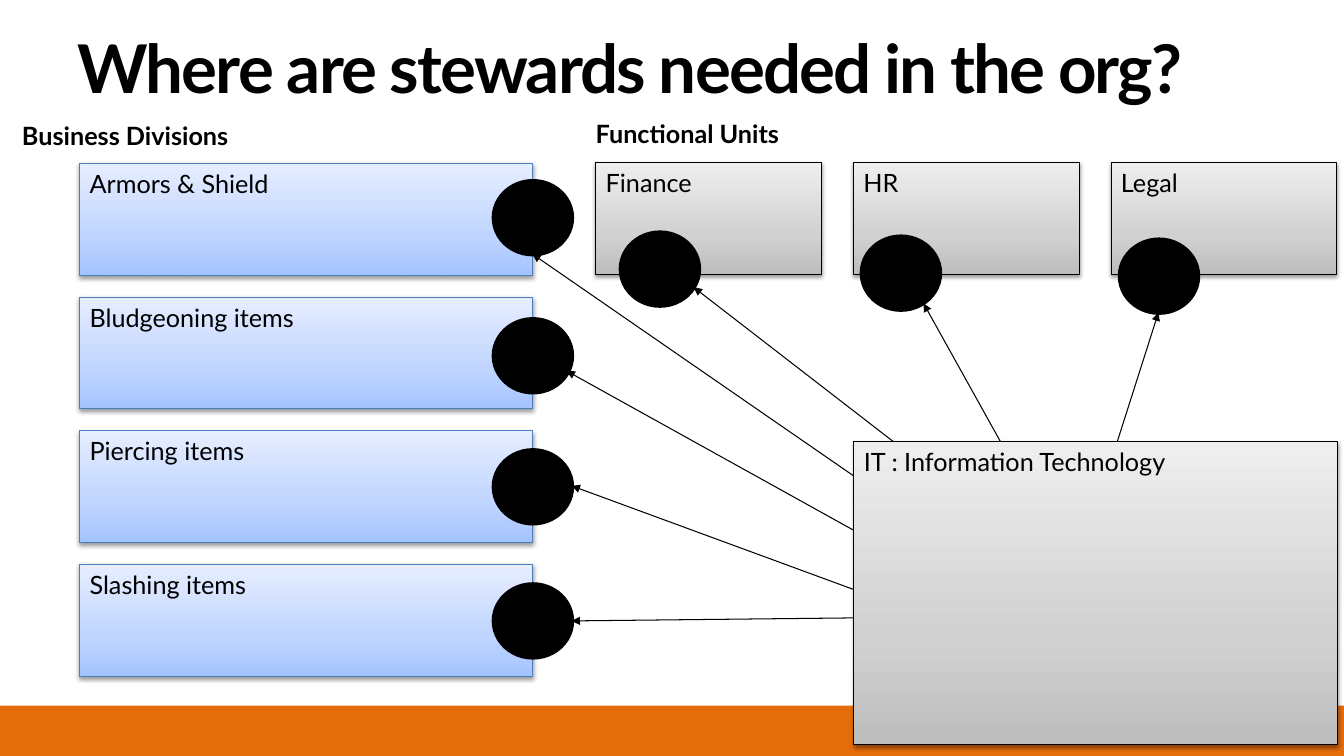
from lxml.etree import SubElement
from pptx import Presentation
from pptx.dml.color import RGBColor
from pptx.enum.shapes import MSO_CONNECTOR, MSO_SHAPE
from pptx.enum.text import MSO_ANCHOR, MSO_AUTO_SIZE, PP_ALIGN
from pptx.oxml import parse_xml
from pptx.oxml.ns import nsdecls, qn
from pptx.util import Inches, Pt

# Content
TITLE = "Where are stewards needed in the org?"
HEADINGS = [("Business Divisions", 0.12, 1.14, 2.34),
            ("Functional Units", 5.81, 1.12, 2.13)]
DIVISIONS = ["Armors & Shield", "Bludgeoning items", "Piercing items", "Slashing items"]
UNITS = ["Finance", "HR", "Legal"]
IT = "IT : Information Technology"

# Steward circles: left, top
DIVISION_STEWARDS = [(4.89, top) for top in (1.79, 3.16, 4.46, 5.79)]
UNIT_STEWARDS = [(6.15, 2.3), (8.54, 2.34), (11.1, 2.37)]

# Arrows from IT to each steward: start, end
DIVISION_ARROWS = [((9.16, 5.2), (5.28, 2.52)), ((8.88, 5.49), (5.62, 3.68)),
                   ((8.58, 5.89), (5.67, 4.82)), ((8.47, 6.13), (5.67, 6.16))]
UNIT_ARROWS = [((9.92, 5.2), (6.88, 2.85)), ((10.25, 4.97), (9.16, 3.01)),
               ((10.76, 5.39), (11.49, 3.1))]

# Layout and style
W, H = 13.33, 7.5
BOX_H = 1.11
DIVISION_X, DIVISION_Y, DIVISION_W, DIVISION_STEP = 0.79, 1.62, 4.49, 1.327
UNIT_X, UNIT_Y, UNIT_W, UNIT_STEP = 5.91, 1.61, 2.24, 2.555
BLACK, ORANGE = "000000", "E46C0A"
BLUE = (("A4C4FF", "BFD4FF", "E6EEFF"), "4B7EBC")
GREY = (("BDBDBD", "D1D1D1", "EEEEEE"), BLACK)
STOPS = (0, 35, 100)

prs = Presentation()
prs.slide_width, prs.slide_height = Inches(W), Inches(H)
s = prs.slides.add_slide(prs.slide_layouts[6])


def rgb(value):
    return RGBColor.from_string(value)


def write(sp, text, size=18, bold=False):
    tf = sp.text_frame
    tf.text = text
    p = tf.paragraphs[0]
    p.alignment = PP_ALIGN.LEFT
    r = p.runs[0]
    r.font.name, r.font.size, r.font.bold = "Lato", Pt(size), bold
    r.font.color.rgb = rgb(BLACK)
    return r


def add_shape(kind, x, y, w, h, fill, line=None, weight=0.75):
    sp = s.shapes.add_shape(kind, Inches(x), Inches(y), Inches(w), Inches(h))
    sp.shadow.inherit = False
    sp.fill.solid()
    sp.fill.fore_color.rgb = rgb(fill)
    if line:
        sp.line.color.rgb = rgb(line)
        sp.line.width = Pt(weight)
    else:
        sp.line.fill.background()
    return sp


def add_box(text, x, y, w, h, style):
    colors, line = style
    sp = add_shape(MSO_SHAPE.RECTANGLE, x, y, w, h, colors[0], line)
    spPr = sp.fill._xPr
    # Vertical gradient, darkest at the bottom
    stops = "".join(f'<a:gs pos="{pos * 1000}"><a:srgbClr val="{color}"/></a:gs>'
                    for pos, color in zip(STOPS, colors))
    spPr.replace(spPr.find(qn("a:solidFill")), parse_xml(
        f'<a:gradFill {nsdecls("a")} rotWithShape="1"><a:gsLst>{stops}</a:gsLst>'
        '<a:lin ang="16200000" scaled="0"/></a:gradFill>'))
    # Soft shadow below
    shadow = SubElement(spPr.find(qn("a:effectLst")), qn("a:outerShdw"),
                        blurRad=str(Pt(3.1)), dist=str(Pt(1.6)), dir="5400000", rotWithShape="0")
    color = SubElement(shadow, qn("a:srgbClr"), val=BLACK)
    SubElement(color, qn("a:alpha"), val="38000")
    sp.text_frame.vertical_anchor = MSO_ANCHOR.TOP
    write(sp, text)


def add_arrow(start, end):
    points = [Inches(v) for v in start + end]
    line = s.shapes.add_connector(MSO_CONNECTOR.STRAIGHT, *points)
    line.line.color.rgb = rgb(BLACK)
    line.line.width = Pt(0.75)
    SubElement(line.line._get_or_add_ln(), qn("a:tailEnd"), type="triangle")
    SubElement(line._element.spPr, qn("a:effectLst"))


# Footer band
add_shape(MSO_SHAPE.RECTANGLE, 0, H - 0.5, W, 0.5, ORANGE)

# Title
title = s.shapes.add_textbox(Inches(0.67), Inches(0.3), Inches(12.19), Inches(0.72))
title.text_frame.word_wrap = True
title.text_frame.vertical_anchor = MSO_ANCHOR.MIDDLE
write(title, TITLE, 48, True).font._element.set("spc", "-130")

# Group headings
for text, x, y, w in HEADINGS:
    heading = s.shapes.add_textbox(Inches(x), Inches(y), Inches(w), Inches(0.4))
    heading.text_frame.word_wrap = False
    heading.text_frame.auto_size = MSO_AUTO_SIZE.SHAPE_TO_FIT_TEXT
    write(heading, text, bold=True)

# Divisions in a column, units in a row
for i, text in enumerate(DIVISIONS):
    add_box(text, DIVISION_X, DIVISION_Y + i * DIVISION_STEP, DIVISION_W, BOX_H, BLUE)
for i, text in enumerate(UNITS):
    add_box(text, UNIT_X + i * UNIT_STEP, UNIT_Y, UNIT_W, BOX_H, GREY)

# Stewards and the arrows that reach them
for x, y in DIVISION_STEWARDS + UNIT_STEWARDS:
    add_shape(MSO_SHAPE.OVAL, x, y, 0.79, 0.74, BLACK, BLACK, 2)
for start, end in DIVISION_ARROWS + UNIT_ARROWS:
    add_arrow(start, end)

# IT covers the arrow starts
add_box(IT, 8.47, 4.38, 4.8, 3.01, GREY)

prs.save("out.pptx")
